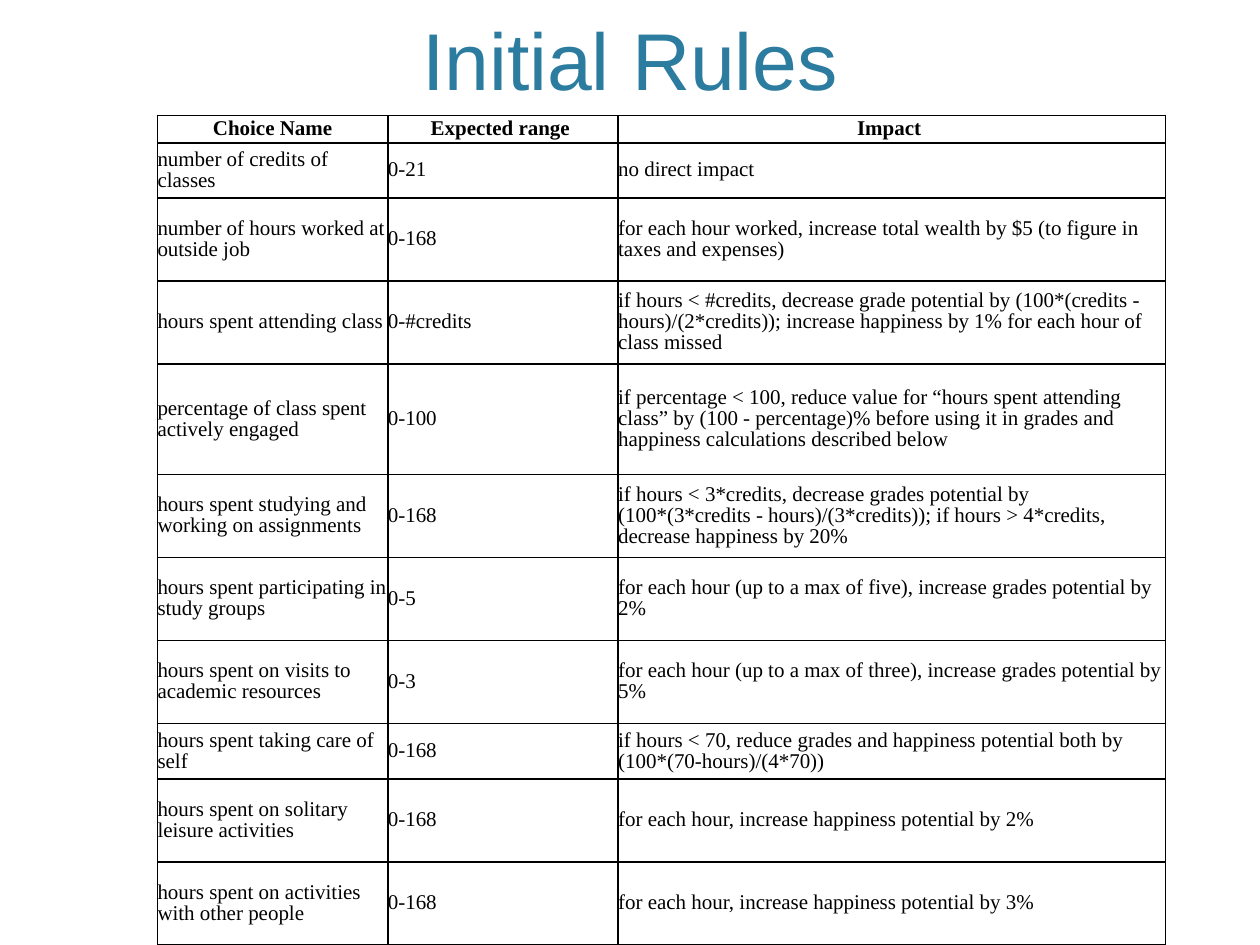
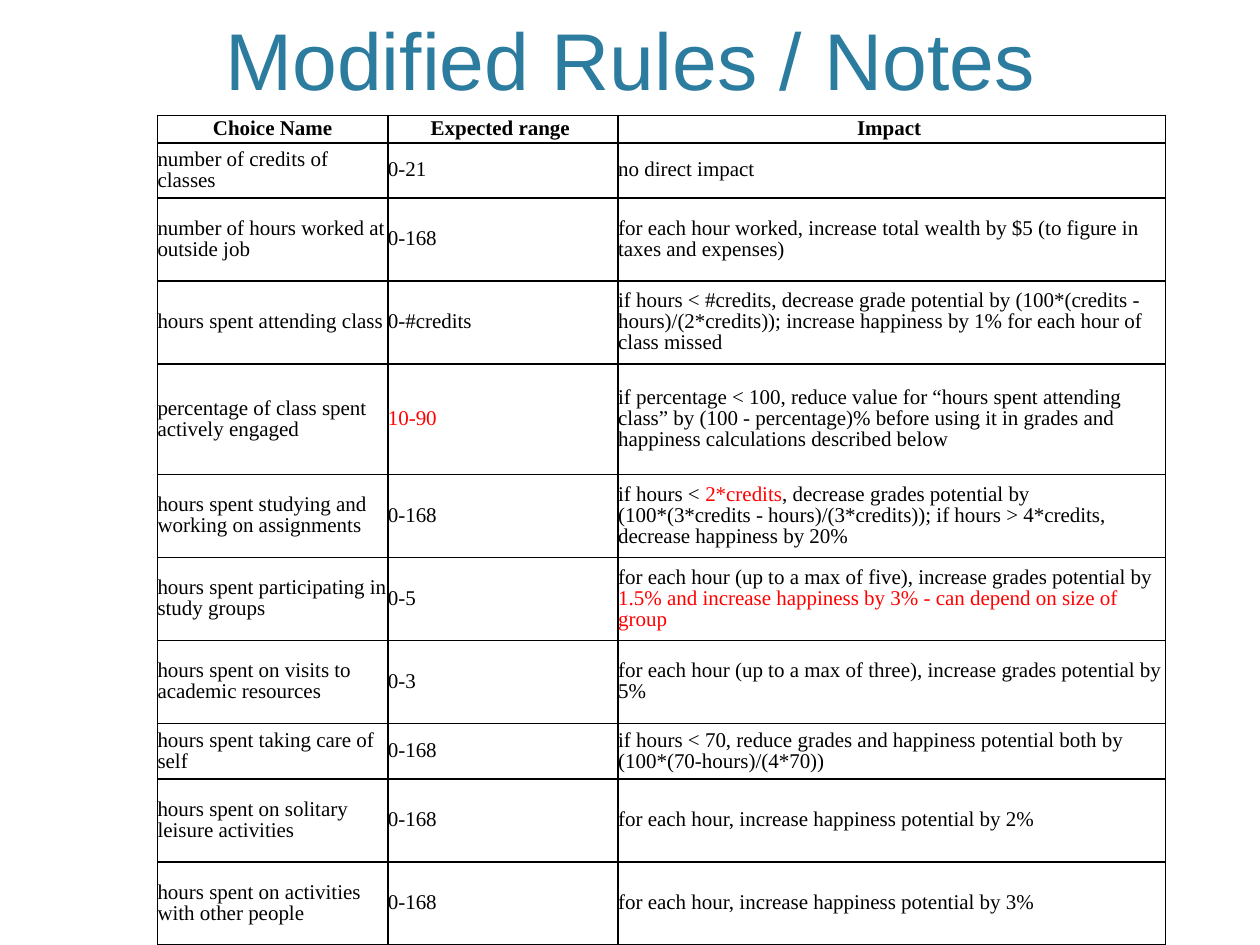
from dataclasses import dataclass

from pptx import Presentation
from pptx.dml.color import RGBColor
from pptx.enum.text import MSO_ANCHOR, MSO_AUTO_SIZE, PP_ALIGN
from pptx.oxml import parse_xml
from pptx.oxml.ns import nsdecls
from pptx.util import Inches, Pt


@dataclass(frozen=True)
class Theme:
    """Colours, fonts and type sizes of the deck."""
    title_color: str = "2C7C9F"
    ink: str = "000000"
    changed: str = "FF0000"
    title_font: str = "Arial"
    table_font: str = "Times New Roman"
    title_size: int = 46
    table_size: int = 12
    line_spacing: float = 0.9
    border: int = 1


THEME = Theme()
WIDTH, HEIGHT = Inches(10), Inches(7.5)
TITLE_BOX = (0.06, 0.01, 0.88, 0.11)
TABLE_BOX = (0.125, 0.122, 0.8, 0.878)
COLUMN_SHARES = (0.2285, 0.2285, 0.543)
ROW_LINES = (1, 2, 3, 3, 4, 3, 3, 3, 2, 3, 3)
HEADINGS = ("Choice Name", "Expected range ", "Impact ")
RULES = (
    ("number of credits of classes", "0-21", "no direct impact"),
    ("number of hours worked at outside job", "0-168",
     "for each hour worked, increase total wealth by $5 (to figure in taxes and expenses)"),
    ("hours spent attending class", "0-#credits",
     "if hours < #credits, decrease grade potential by (100*(credits - hours)/(2*credits)); "
     "increase happiness by 1% for each hour of class missed"),
    ("percentage of class spent actively engaged", "0-100",
     "if percentage < 100, reduce value for “hours spent attending class” by "
     "(100 - percentage)% before using it in grades and happiness calculations described below"),
    ("hours spent studying and working on assignments", "0-168",
     "if hours < 3*credits, decrease grades potential by (100*(3*credits - hours)/(3*credits)); "
     "if hours > 4*credits, decrease happiness by 20%"),
    ("hours spent participating in study groups", "0-5",
     "for each hour (up to a max of five), increase grades potential by 2%"),
    ("hours spent on visits to academic resources", "0-3",
     "for each hour (up to a max of three), increase grades potential by 5%"),
    ("hours spent taking care of self", "0-168",
     "if hours < 70, reduce grades and happiness potential both by (100*(70-hours)/(4*70))"),
    ("hours spent on solitary leisure activities", "0-168",
     "for each hour, increase happiness potential by 2%"),
    ("hours spent on activities with other people", "0-168",
     "for each hour, increase happiness potential by 3%"),
)
CHANGES = {
    (3, 1): "|10-90|",
    (4, 2): "if hours < |2*credits|, decrease grades potential by "
            "(100*(3*credits - hours)/(3*credits)); if hours > 4*credits, "
            "decrease happiness by 20%",
    (5, 2): "for each hour (up to a max of five), increase grades potential by "
            "|1.5% and increase happiness by 3% - can depend on size of group|",
}


def to_emu(box):
    """Turn shares of the slide into left, top, width and height."""
    return [round(share * side) for share, side in zip(box, (WIDTH, HEIGHT) * 2)]


def write(tf, text, *, font, size, color, bold=False, align=PP_ALIGN.LEFT, spacing=1.0):
    """Write one paragraph, colouring the parts between bars as changed."""
    p = tf.paragraphs[0]
    p.alignment, p.line_spacing = align, spacing
    for i, part in enumerate(text.split("|")):
        if part:
            r = p.add_run()
            r.text = part
            r.font.name, r.font.size, r.font.bold = font, Pt(size), bold
            r.font.color.rgb = RGBColor.from_string(THEME.changed if i % 2 else color)


def format_cell(cell):
    """Give a cell no margins, no fill and a thin border on each side."""
    cell.margin_left = cell.margin_right = cell.margin_top = cell.margin_bottom = 0
    cell.vertical_anchor = MSO_ANCHOR.MIDDLE
    cell.fill.background()
    tc_pr = cell._tc.get_or_add_tcPr()
    for i, side in enumerate("LRTB"):
        tc_pr.insert(i, parse_xml(
            f'<a:ln{side} {nsdecls("a")} w="{Pt(THEME.border)}"><a:solidFill>'
            f'<a:srgbClr val="{THEME.ink}"/></a:solidFill></a:ln{side}>'))


def place_title(s, text, box):
    """Move and format the title placeholder."""
    sp = s.shapes.title
    sp.left, sp.top, sp.width, sp.height = to_emu(box)
    tf = sp.text_frame
    tf.word_wrap, tf.auto_size = True, MSO_AUTO_SIZE.NONE
    tf.vertical_anchor = MSO_ANCHOR.BOTTOM
    write(tf, text, font=THEME.title_font, size=THEME.title_size,
          color=THEME.title_color, align=PP_ALIGN.CENTER)


def place_rules(s, rules, box):
    """Draw the table of rules, its rows sized by their lines of text."""
    left, top, width, height = to_emu(box)
    rows = (HEADINGS, *rules)
    table = s.shapes.add_table(len(rows), len(HEADINGS), left, top, width, height).table
    table.first_row = table.horz_banding = False
    for column, share in zip(table.columns, COLUMN_SHARES):
        column.width = round(width * share)
    for row, lines in zip(table.rows, ROW_LINES):
        row.height = round(height * lines / sum(ROW_LINES))
    for i, texts in enumerate(rows):
        for j, text in enumerate(texts):
            cell = table.cell(i, j)
            format_cell(cell)
            write(cell.text_frame, text, font=THEME.table_font, size=THEME.table_size,
                  color=THEME.ink, bold=i == 0, spacing=THEME.line_spacing,
                  align=PP_ALIGN.LEFT if i else PP_ALIGN.CENTER)


def add_rules_slide(prs, title, changes):
    """Add a slide with a title and the rules after the given changes."""
    s = prs.slides.add_slide(prs.slide_layouts[5])
    rules = [[changes.get((i, j), text) for j, text in enumerate(rule)]
             for i, rule in enumerate(RULES)]
    place_title(s, title, TITLE_BOX)
    place_rules(s, rules, TABLE_BOX)


def main():
    """Build and save the deck."""
    prs = Presentation()
    prs.slide_width, prs.slide_height = WIDTH, HEIGHT
    add_rules_slide(prs, "Initial Rules", {})
    add_rules_slide(prs, "Modified Rules / Notes", CHANGES)
    prs.save("out.pptx")


if __name__ == "__main__":
    main()
